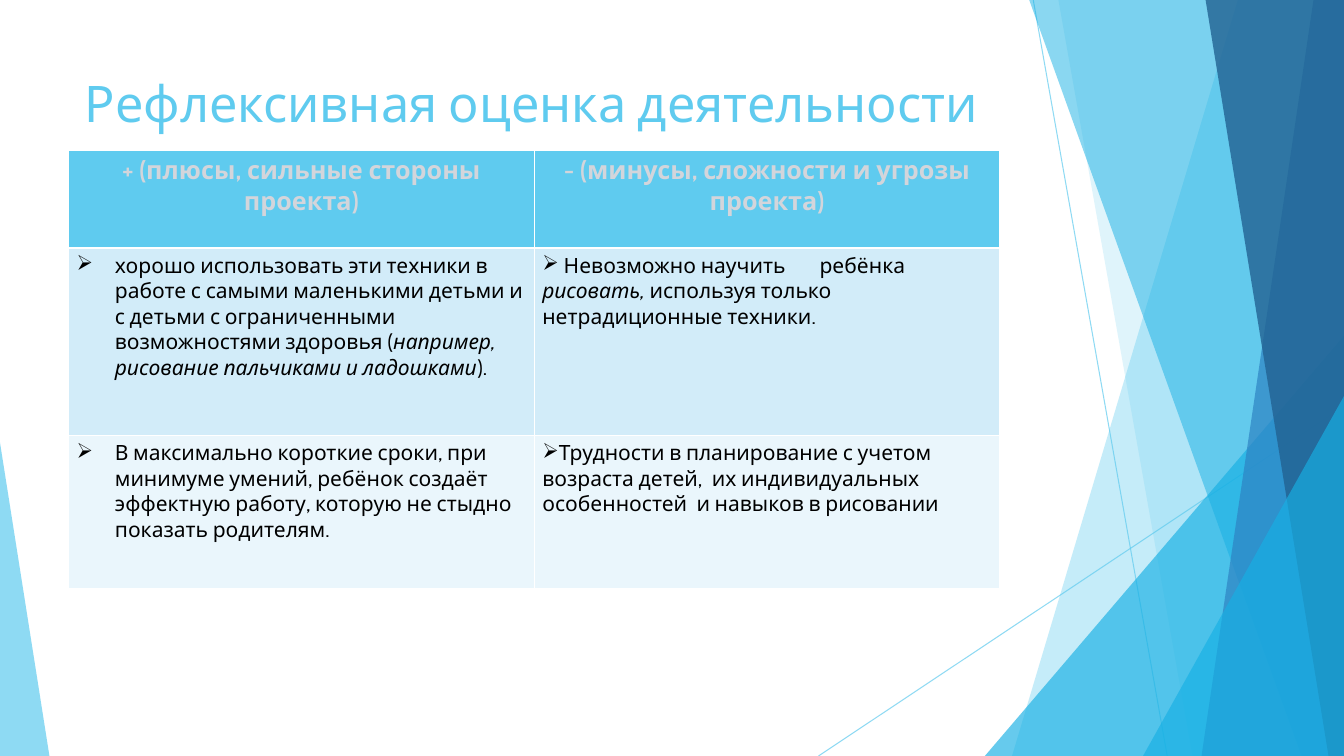
from lxml.etree import SubElement
from pptx import Presentation
from pptx.dml.color import RGBColor
from pptx.enum.shapes import MSO_CONNECTOR, MSO_SHAPE
from pptx.enum.text import MSO_ANCHOR, MSO_AUTO_SIZE, PP_ALIGN
from pptx.oxml.ns import qn
from pptx.util import Inches, Pt

SKY, CYAN, BLUE, NAVY = "5FCBEF", "17B0E4", "2E83C3", "226292"
SILVER, BLACK, WHITE = "D3D5DB", "000000", "FFFFFF"


def paint(fill, color, opacity=100):
    fill.solid()
    fill.fore_color.rgb = RGBColor.from_string(color)
    if opacity < 100:
        shade = fill._xPr.find(qn("a:solidFill"))[0]
        SubElement(shade, qn("a:alpha"), val=str(opacity * 1000))


class FacetSlide:
    font_name = "Cabin"

    def __init__(self, deck):
        self.width, self.height = deck.slide_width, deck.slide_height
        self.slide = deck.slides.add_slide(deck.slide_layouts[5])
        paint(self.slide.background.fill, WHITE)

    def x(self, percent):
        return round(self.width * percent / 100)

    def y(self, percent):
        return round(self.height * percent / 100)

    def box(self, left, top, width, height):
        return self.x(left), self.y(top), self.x(width), self.y(height)

    def style(self, font, size, color, bold=False):
        font.name, font.size, font.bold = self.font_name, Pt(size), bold
        paint(font.fill, color)

    def finish(self, facet, color, opacity):
        paint(facet.fill, color, opacity)
        facet.line.fill.background()
        facet.shadow.inherit = False

    def ray(self, start, end):
        ray = self.slide.shapes.add_connector(
            MSO_CONNECTOR.STRAIGHT,
            self.x(start[0]), self.y(start[1]), self.x(end[0]), self.y(end[1]))
        ray.line.width = Pt(0.75)
        paint(ray.line.fill, SKY, 70)
        SubElement(ray._element.spPr, qn("a:effectLst"))

    def band(self, top_left, bottom_left, color, opacity):
        outline = self.slide.shapes.build_freeform(self.x(top_left), 0)
        outline.add_line_segments([
            (self.width, 0), (self.width, self.height),
            (self.x(bottom_left), self.height)])
        self.finish(outline.convert_to_shape(), color, opacity)

    def wedge(self, left, top, width, apex, color, opacity):
        wedge = self.slide.shapes.add_shape(
            MSO_SHAPE.ISOSCELES_TRIANGLE, *self.box(left, top, width, 100 - top))
        wedge.adjustments[0] = apex
        self.finish(wedge, color, opacity)

    def title(self, wording, *place):
        title = self.slide.shapes.title
        title.left, title.top, title.width, title.height = self.box(*place)
        frame = title.text_frame
        frame.text = wording
        frame.word_wrap = True
        frame.auto_size = MSO_AUTO_SIZE.NONE
        frame.vertical_anchor = MSO_ANCHOR.TOP
        heading = frame.paragraphs[0]
        heading.alignment = PP_ALIGN.LEFT
        self.style(heading.font, 36, SKY)

    def bullet(self, paragraph, hang, tab):
        props = paragraph._p.get_or_add_pPr()
        props.set("marL", str(Inches(hang)))
        props.set("indent", str(-Inches(hang)))
        SubElement(props, qn("a:buChar"), char="➢")
        if tab:
            stops = SubElement(props, qn("a:tabLst"))
            SubElement(stops, qn("a:tab"), pos=str(Inches(tab)), algn="l")

    def cell(self, cell, fill):
        paint(cell.fill, fill)
        cell.margin_left = cell.margin_right = Inches(0.08)
        cell.margin_top = cell.margin_bottom = Inches(0.05)
        return cell.text_frame.paragraphs[0]

    def table(self, left, top, width, heights, headings, reflections, fills):
        table = self.slide.shapes.add_table(
            len(heights), len(headings),
            *self.box(left, top, width, sum(heights))).table
        for row, height in zip(table.rows, heights):
            row.height = self.y(height)
        for column, heading in enumerate(headings):
            paragraph = self.cell(table.cell(0, column), SKY)
            paragraph.add_run().text = heading
            paragraph.alignment = PP_ALIGN.CENTER
            self.style(paragraph.font, 18, SILVER, True)
        for row, (thoughts, fill) in enumerate(zip(reflections, fills), 1):
            for column, pieces in enumerate(thoughts):
                paragraph = self.cell(table.cell(row, column), fill)
                has_tab = any("\t" in piece for piece in pieces)
                self.bullet(paragraph, 0 if column else 0.38, 2.75 if has_tab else 0)
                self.style(paragraph.font, 15, BLACK)
                for order, piece in enumerate(pieces):
                    run = paragraph.add_run()
                    run.text = piece
                    if order % 2:
                        run.font.italic = True


def main():
    deck = Presentation()
    deck.slide_width, deck.slide_height = Inches(13.33), Inches(7.5)
    page = FacetSlide(deck)

    page.ray((76.88, 0), (86.85, 100))
    page.ray((100, 53.73), (60.9, 100))
    page.band(92.1, 75.3, SKY, 36)
    page.band(78.75, 88.73, SKY, 20)
    page.wedge(73.28, 44.4, 26.72, 1, CYAN, 66)
    page.band(76.58, 96.83, CYAN, 50)
    page.band(97.73, 89.4, BLUE, 70)
    page.band(89.7, 98.85, NAVY, 80)
    page.wedge(85.05, 52.4, 14.95, 1, CYAN, 66)
    page.wedge(0, 58.53, 3.68, 0, SKY, 70)

    page.title("Рефлексивная оценка деятельности", 5.55, 8.93, 70.5, 19.2)
    page.table(
        5.1, 19.87, 69.3, (12.93, 24.8, 20.27),
        ("+ (плюсы, сильные стороны проекта)",
         "- (минусы, сложности и угрозы проекта)"),
        ((("хорошо использовать эти техники в работе с самыми маленькими детьми "
           "и с детьми с ограниченными возможностями здоровья (",
           "например, рисование пальчиками и ладошками", ")."),
          (" Невозможно научить\tребёнка ", "рисовать,",
           " используя только нетрадиционные техники.")),
         (("В максимально короткие сроки, при минимуме умений, ребёнок создаёт "
           "эффектную работу, которую не стыдно показать родителям.",),
          ("Трудности в планирование с учетом возраста детей,  их индивидуальных "
           "особенностей  и навыков в рисовании",))),
        ("D2ECF9", "EAF6FC"))
    deck.save("out.pptx")


if __name__ == "__main__":
    main()
